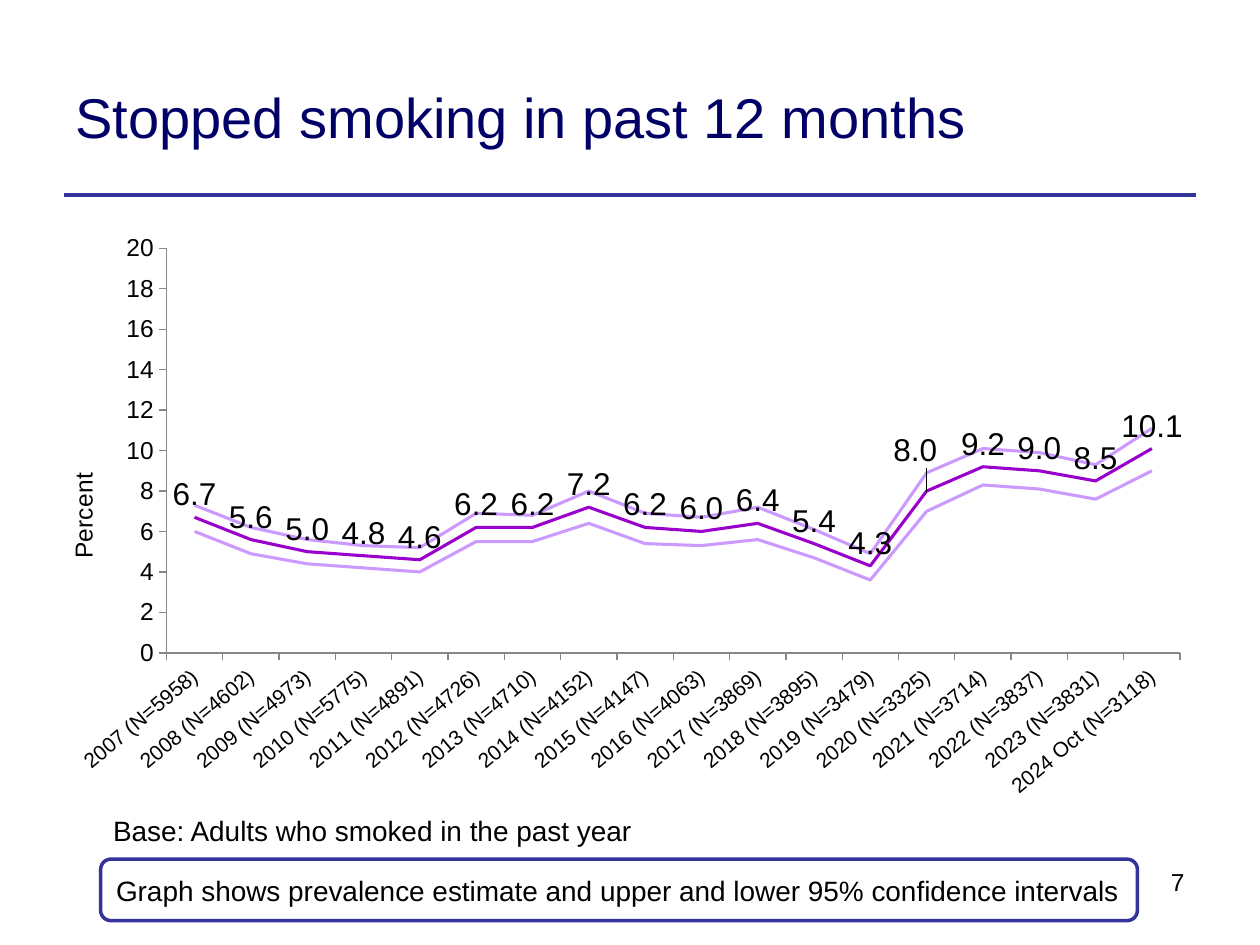
from lxml import etree
from pptx import Presentation
from pptx.chart.data import CategoryChartData
from pptx.dml.color import RGBColor
from pptx.enum.chart import XL_CHART_TYPE, XL_LABEL_POSITION, XL_MARKER_STYLE, XL_TICK_MARK
from pptx.enum.shapes import MSO_CONNECTOR, MSO_SHAPE
from pptx.enum.text import MSO_ANCHOR, PP_ALIGN
from pptx.oxml import parse_xml
from pptx.oxml.ns import nsdecls, qn
from pptx.util import Cm, Pt

LINE_CHART = XL_CHART_TYPE.LINE
ABOVE = XL_LABEL_POSITION.ABOVE
NO_MARKER = XL_MARKER_STYLE.NONE
TICK_OUT, TICK_NONE = XL_TICK_MARK.OUTSIDE, XL_TICK_MARK.NONE
STRAIGHT = MSO_CONNECTOR.STRAIGHT
ROUNDED = MSO_SHAPE.ROUNDED_RECTANGLE
TOP, MIDDLE = MSO_ANCHOR.TOP, MSO_ANCHOR.MIDDLE
LEFT, RIGHT = PP_ALIGN.LEFT, PP_ALIGN.RIGHT

FONT = "Arial"
NAVY = RGBColor(0x00, 0x00, 0x66)
INDIGO = RGBColor(0x33, 0x33, 0x99)
PURPLE = RGBColor(0x99, 0x00, 0xCC)
LILAC = RGBColor(0xCC, 0x99, 0xFF)
GREY = RGBColor(0x86, 0x86, 0x86)
BLACK = RGBColor(0x00, 0x00, 0x00)
WHITE = RGBColor(0xFF, 0xFF, 0xFF)

LABEL_FORMAT = "#,##0.0"
# Year, sample size, estimate, lower limit, upper limit
SURVEYS = [
    ("2007", 5958, 6.7, 6.0, 7.3),
    ("2008", 4602, 5.6, 4.9, 6.2),
    ("2009", 4973, 5.0, 4.4, 5.6),
    ("2010", 5775, 4.8, 4.2, 5.3),
    ("2011", 4891, 4.6, 4.0, 5.2),
    ("2012", 4726, 6.2, 5.5, 6.9),
    ("2013", 4710, 6.2, 5.5, 6.8),
    ("2014", 4152, 7.2, 6.4, 8.0),
    ("2015", 4147, 6.2, 5.4, 6.9),
    ("2016", 4063, 6.0, 5.3, 6.7),
    ("2017", 3869, 6.4, 5.6, 7.2),
    ("2018", 3895, 5.4, 4.7, 6.1),
    ("2019", 3479, 4.3, 3.6, 4.9),
    ("2020", 3325, 8.0, 7.0, 8.9),
    ("2021", 3714, 9.2, 8.3, 10.1),
    ("2022", 3837, 9.0, 8.1, 9.9),
    ("2023", 3831, 8.5, 7.6, 9.3),
    ("2024 Oct", 3118, 10.1, 9.0, 11.1),
]
SERIES_COLORS = [PURPLE, LILAC, LILAC]
MOVED_LABEL = 13


def set_font(font, size, color=BLACK):
    font.name = FONT
    font.size = Pt(size)
    font.bold = False
    font.color.rgb = color


def write_text(box, text, size=16, color=BLACK, align=LEFT, anchor=TOP, wrap=True):
    frame = box.text_frame
    frame.word_wrap = wrap
    frame.vertical_anchor = anchor
    para = frame.paragraphs[0]
    para.alignment = align
    span = para.add_run()
    span.text = text
    set_font(span.font, size, color)


def add_text(page, place, text, **style):
    box = page.shapes.add_textbox(*map(Cm, place))
    write_text(box, text, **style)


def add_rule(page, left, right, top):
    rule = page.shapes.add_connector(STRAIGHT, Cm(left), Cm(top), Cm(right), Cm(top))
    rule.line.color.rgb = INDIGO
    rule.line.width = Pt(2.25)
    etree.SubElement(rule._element.spPr, qn("a:effectLst"))


def add_note(page, place, text):
    box = page.shapes.add_shape(ROUNDED, *map(Cm, place))
    box.shadow.inherit = False
    box.fill.solid()
    box.fill.fore_color.rgb = WHITE
    box.line.color.rgb = INDIGO
    box.line.width = Pt(2)
    write_text(box, text, anchor=MIDDLE)


def make_layout(x, y, width=None, height=None):
    """Manual chart layout; with a size it fixes the inner plot area."""
    parts = []
    if width:
        parts += [("layoutTarget", "inner"), ("xMode", "edge"), ("yMode", "edge")]
    parts += [("x", x), ("y", y)]
    if width:
        parts += [("w", width), ("h", height)]
    body = "".join(f'<c:{name} val="{value}"/>' for name, value in parts)
    return parse_xml(f'<c:layout {nsdecls("c")}><c:manualLayout>{body}'
                     "</c:manualLayout></c:layout>")


def style_axis(axis, size):
    axis.has_major_gridlines = False
    axis.major_tick_mark = TICK_OUT
    axis.minor_tick_mark = TICK_NONE
    axis.format.line.color.rgb = GREY
    axis.format.line.width = Pt(0.75)
    set_font(axis.tick_labels.font, size)


def label_estimates(series):
    labels = series.data_labels
    labels.show_value = True
    labels.number_format = LABEL_FORMAT
    labels.number_format_is_linked = False
    labels.position = ABOVE
    set_font(labels.font, 18)

    # One label is moved clear of the steep line
    label = series.points[MOVED_LABEL].data_label
    set_font(label.font, 18)
    label.position = ABOVE
    index = labels._element.find(qn("c:dLbl")).find(qn("c:idx"))
    number = parse_xml(f'<c:numFmt {nsdecls("c")} formatCode="{LABEL_FORMAT}" '
                       'sourceLinked="0"/>')
    index.addnext(number)
    index.addnext(make_layout(-0.01, -0.03))


def add_trend_chart(page, place):
    data = CategoryChartData(number_format="0.0")
    data.categories = [f"{year} (N={size})" for year, size, *_ in SURVEYS]
    for column in range(3):
        data.add_series(f"Series {column + 1}", [row[column + 2] for row in SURVEYS])
    chart = page.shapes.add_chart(LINE_CHART, *map(Cm, place), data).chart
    chart.has_legend = False
    chart.has_title = False
    set_font(chart.font, 18)

    # Plot area
    plot_area = chart._chartSpace.chart.plotArea
    for old in plot_area.findall(qn("c:layout")):
        plot_area.remove(old)
    plot_area.insert(0, make_layout(0.091, 0.047, 0.892, 0.689))

    # Lines
    plot = chart.plots[0]
    plot.vary_by_categories = False
    for series, color in zip(plot.series, SERIES_COLORS):
        series.smooth = False
        series.marker.style = NO_MARKER
        series.format.line.color.rgb = color
        series.format.line.width = Pt(1.75)
    label_estimates(plot.series[0])

    # Axes
    style_axis(chart.category_axis, 12)
    text_body = chart.category_axis._element.find(qn("c:txPr")).find(qn("a:bodyPr"))
    text_body.set("rot", str(-40 * 60000))
    values = chart.value_axis
    style_axis(values, 14)
    values.minimum_scale, values.maximum_scale, values.major_unit = 0, 20, 2
    values.tick_labels.number_format = "0"
    values.tick_labels.number_format_is_linked = False
    span = values.axis_title.text_frame.paragraphs[0].add_run()
    span.text = "Percent"
    set_font(span.font, 14)


def main():
    deck = Presentation()
    deck.slide_width, deck.slide_height = Cm(25.4), Cm(19.05)
    page = deck.slides.add_slide(deck.slide_layouts[6])

    # Heading
    add_rule(page, 1.3, 24.1, 3.94)
    add_text(page, (1.27, 0.76, 20.04, 3.18), "Stopped smoking in past 12 months",
             size=32, color=NAVY, anchor=MIDDLE)

    # Chart
    add_trend_chart(page, (1.27, 4.45, 22.91, 11.84))

    # Footer
    add_text(page, (17.09, 17.35, 7.04, 1.32), "7", size=14, align=RIGHT)
    add_note(page, (2.03, 17.32, 20.9, 1.24),
             "Graph shows prevalence estimate and upper and lower 95% confidence intervals")
    add_text(page, (2.03, 16.28, 11.1, 0.94), "Base: Adults who smoked in the past year",
             wrap=False)

    deck.save("out.pptx")


if __name__ == "__main__":
    main()
